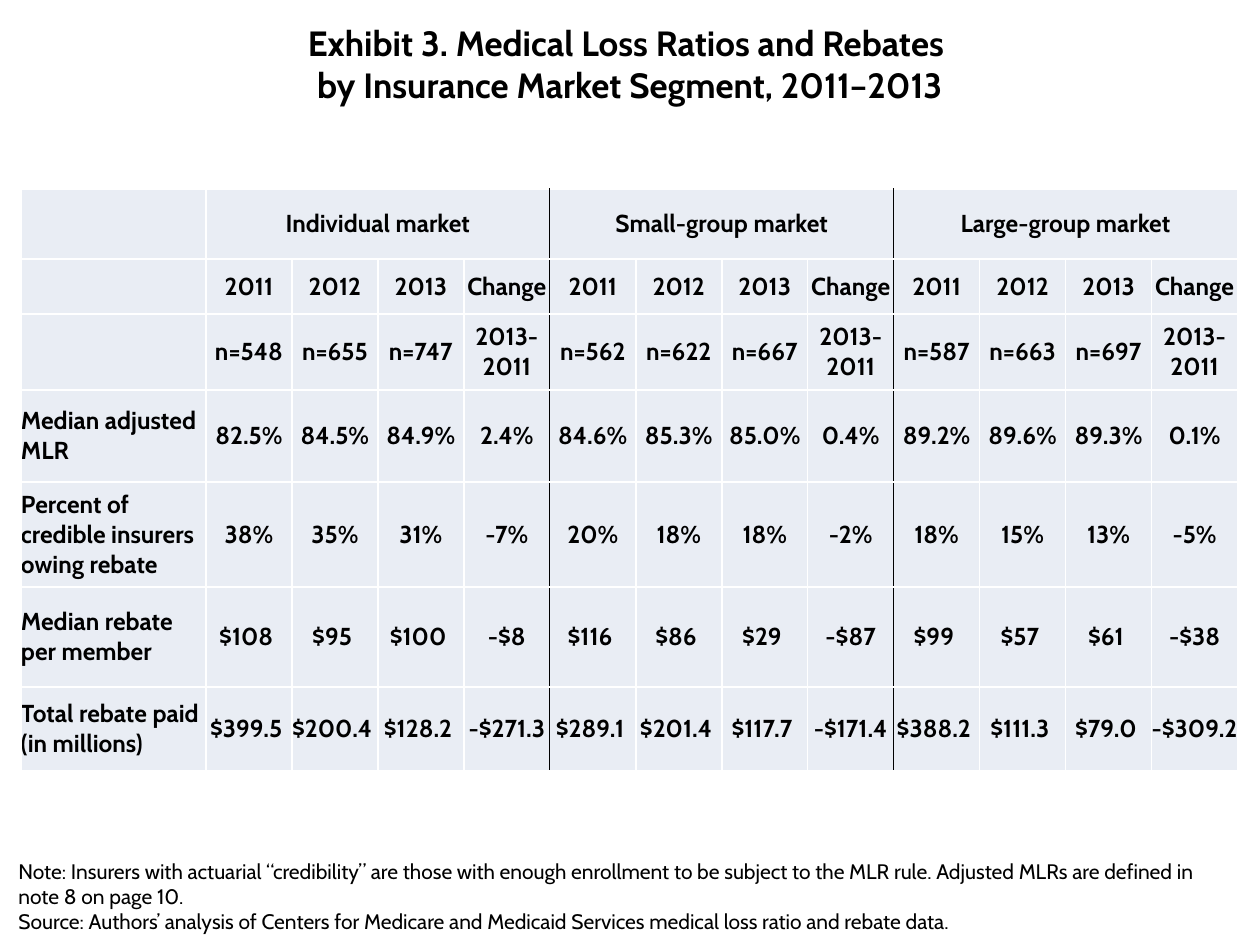
from lxml.etree import SubElement
from pptx import Presentation
from pptx.dml.color import RGBColor
from pptx.enum.text import MSO_ANCHOR as Anchor, MSO_AUTO_SIZE as AutoSize, PP_ALIGN as Align
from pptx.oxml.ns import qn
from pptx.util import Emu, Pt

PX_PER_INCH = 126
FONT = "Cabin"
BLACK = RGBColor(0x00, 0x00, 0x00)
WHITE = RGBColor(0xFF, 0xFF, 0xFF)
CELL_FILL = RGBColor(0xE9, 0xED, 0xF4)

TITLE = "Exhibit 3. Medical Loss Ratios and Rebates \vby Insurance Market Segment, 2011–2013"
NOTES = [
    "Note: Insurers with actuarial “credibility” are those with enough enrollment to be subject "
    "to the MLR rule. Adjusted MLRs are defined in\vnote 8 on page 10.",
    "Source: Authors’ analysis of Centers for Medicare and Medicaid Services medical loss ratio "
    "and rebate data.",
]
MARKETS = ["Individual market", "Small-group market", "Large-group market"]
MARKET_SPAN = 4
GROUP_ENDS = (4, 8)
PERIOD = "2013-\v2011"
ROWS = [
    ["", *["2011", "2012", "2013", "Change"] * len(MARKETS)],
    ["", "n=548", "n=655", "n=747", PERIOD, "n=562", "n=622", "n=667", PERIOD,
     "n=587", "n=663", "n=697", PERIOD],
    ["Median adjusted MLR", "82.5%", "84.5%", "84.9%", "2.4%", "84.6%", "85.3%", "85.0%", "0.4%",
     "89.2%", "89.6%", "89.3%", "0.1%"],
    ["Percent of credible insurers owing rebate", "38%", "35%", "31%", "-7%",
     "20%", "18%", "18%", "-2%", "18%", "15%", "13%", "-5%"],
    ["Median rebate per member", "$108 ", "$95 ", "$100 ", "-$8", "$116 ", "$86 ", "$29 ", "-$87",
     "$99 ", "$57 ", "$61 ", "-$38"],
    ["Total rebate paid \v(in millions)", "$399.5 ", "$200.4 ", "$128.2 ", "-$271.3",
     "$289.1 ", "$201.4 ", "$117.7 ", "-$171.4", "$388.2 ", "$111.3 ", "$79.0 ", "-$309.2"],
]
COLUMN_WIDTHS = [185] + [86] * 12
ROW_HEIGHTS = [70, 55, 76, 92, 105, 100, 84]


def px(length):
    return Emu(round(length * 914400 / PX_PER_INCH))


def set_attributes(target, values):
    for name, value in values.items():
        setattr(target, name, value)


def write_paragraph(paragraph, text, size, bold=False, alignment=Align.LEFT):
    paragraph.text = text
    paragraph.alignment = alignment
    set_attributes(paragraph.font, {"name": FONT, "size": Pt(size), "bold": bold})
    for run in paragraph.runs:
        set_attributes(run.font, {"name": FONT, "size": Pt(size), "bold": bold})
        run.font.color.rgb = BLACK


def add_title(slide):
    title = slide.shapes.title
    set_attributes(title, {"left": px(0), "top": px(13), "width": px(1260), "height": px(100)})
    set_attributes(title.text_frame, {
        "word_wrap": True, "auto_size": AutoSize.NONE, "vertical_anchor": Anchor.MIDDLE})
    write_paragraph(title.text_frame.paragraphs[0], TITLE, 20, True, Align.CENTER)


def add_border(cell, side, color, width):
    line = SubElement(cell._tc.get_or_add_tcPr(), qn(f"a:ln{side}"), w=str(Pt(width)))
    fill = SubElement(line, qn("a:solidFill"))
    SubElement(fill, qn("a:srgbClr"), val=str(color))


def format_cell(cell, column):
    last_column = column + (cell.span_width if cell.is_merge_origin else 1) - 1
    divided = {"L": column - 1 in GROUP_ENDS, "R": last_column in GROUP_ENDS}
    for side in "LRTB":
        add_border(cell, side, *((BLACK, 0.75) if divided.get(side) else (WHITE, 1)))
    cell.fill.solid()
    cell.fill.fore_color.rgb = CELL_FILL
    set_attributes(cell, {
        "margin_left": 0, "margin_right": 0, "margin_top": 0, "margin_bottom": 0,
        "vertical_anchor": Anchor.MIDDLE})


def add_ratio_table(slide):
    table = slide.shapes.add_table(
        len(ROW_HEIGHTS), len(COLUMN_WIDTHS), px(21), px(189),
        px(sum(COLUMN_WIDTHS)), px(sum(ROW_HEIGHTS))).table
    set_attributes(table, {"first_row": False, "horz_banding": False})
    for column, width in zip(table.columns, COLUMN_WIDTHS):
        column.width = px(width)
    for row, height in zip(table.rows, ROW_HEIGHTS):
        row.height = px(height)

    header = [""]
    for index, market in enumerate(MARKETS):
        first = 1 + index * MARKET_SPAN
        table.cell(0, first).merge(table.cell(0, first + MARKET_SPAN - 1))
        header += [market] + [""] * (MARKET_SPAN - 1)

    for row, texts in enumerate([header, *ROWS]):
        for column, text in enumerate(texts):
            cell = table.cell(row, column)
            if cell.is_spanned:
                continue
            format_cell(cell, column)
            alignment = Align.CENTER if column else Align.LEFT
            write_paragraph(cell.text_frame.paragraphs[0], text, 14, True, alignment)


def add_notes(slide):
    frame = slide.shapes.add_textbox(px(6), px(852), px(1213), px(89)).text_frame
    set_attributes(frame, {"word_wrap": False, "auto_size": AutoSize.SHAPE_TO_FIT_TEXT})
    for index, text in enumerate(NOTES):
        paragraph = frame.add_paragraph() if index else frame.paragraphs[0]
        write_paragraph(paragraph, text, 12)


def main():
    presentation = Presentation()
    set_attributes(presentation, {"slide_width": px(1260), "slide_height": px(945)})
    slide = presentation.slides.add_slide(presentation.slide_layouts[5])
    add_title(slide)
    add_ratio_table(slide)
    add_notes(slide)
    presentation.save("out.pptx")


if __name__ == "__main__":
    main()
